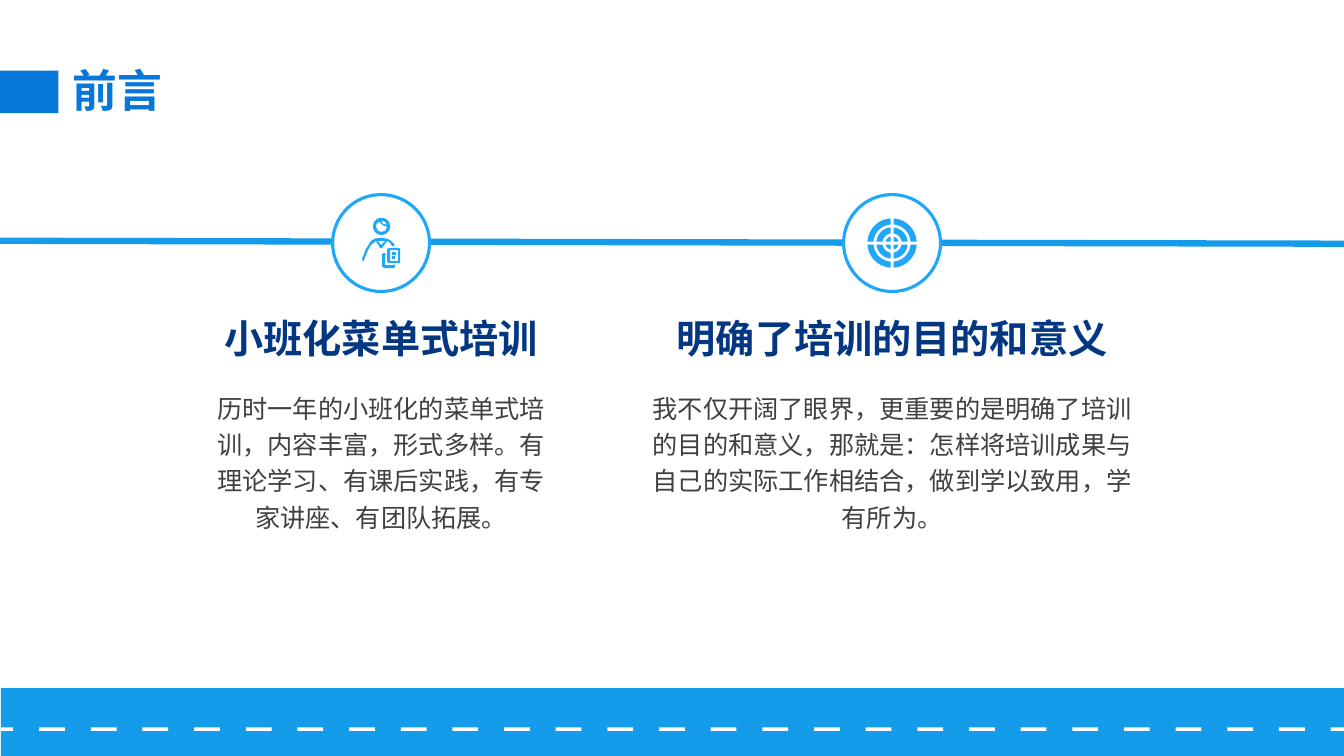
from math import acos, asin, cos, pi, sin, sqrt

from lxml.etree import SubElement
from pptx import Presentation
from pptx.dml.color import RGBColor
from pptx.enum.shapes import MSO_CONNECTOR as Connector, MSO_SHAPE as Preset
from pptx.enum.text import MSO_ANCHOR as Anchor, PP_ALIGN as Align
from pptx.oxml.ns import qn
from pptx.util import Pt

WHITE = RGBColor(0xFF, 0xFF, 0xFF)
TITLE_BLUE = RGBColor(0x07, 0x77, 0xD9)
ROAD_BLUE = RGBColor(0x14, 0x9C, 0xEA)
ICON_BLUE = RGBColor(0x20, 0xA7, 0xFA)
NAVY = RGBColor(0x03, 0x37, 0x82)
GRAY = RGBColor(0x40, 0x40, 0x40)
LATIN_FONT = "Arial"
CHINESE_FONT = "Noto Sans CJK SC"
WIDTH, HEIGHT = 960, 540


def arc(x, y, radius, start, end, steps=16):
    angles = [start + (end - start) * i / steps for i in range(steps + 1)]
    return [(x + radius * cos(a), y + radius * sin(a)) for a in angles]


def box(left, top, width, height):
    right, bottom = left + width, top + height
    return [(left, top), (right, top), (right, bottom), (left, bottom)]


def target_outlines(x, y):
    gap = 1.08
    outlines = []
    for outer, inner in ((17.6, 13.3), (11.2, 6.9), (4.7, gap * sqrt(2))):
        for quarter in range(4):
            turn = quarter * pi / 2
            far = arc(x, y, outer, turn + asin(gap / outer), turn + acos(gap / outer))
            near = arc(x, y, inner, turn + acos(gap / inner), turn + asin(gap / inner))
            outlines.append(far + near)
    return outlines


def trainer_outlines(x, y):
    head = arc(0.5, -16.5, 8.5, 0, 2 * pi, 32)
    face = [(-2, -21), (-4.5, -19), (-5, -16), (-3, -12), (0.5, -11), (4, -12),
            (6, -16), (2, -17.5)]
    hair = [(0, -22), (2, -19), (6, -18), (4, -21)]
    body = [(-18, 18), (-19, 16), (-15, 6), (-10, -2), (-6, -4.5), (-2, -5), (3, -5),
            (9, -3), (13, 1), (13.5, 3), (11, 3), (9, 0), (6, -2), (1, 5), (-1, 5),
            (-5, -2), (-10, 2), (-13, 7), (-17, 17)]
    collar = [(-3, -2), (0, 2), (4, -2)]
    back_card = [(13, 25), (3, 25), (1, 23), (1, 11), (3, 10), (5, 11), (4, 12.5),
                 (4, 22), (12, 22), (13, 21), (14, 23)]
    front_card = [(8, 5), (18, 5), (19, 6), (19, 19), (18, 20), (8, 20), (6, 19), (6, 6)]
    window = box(9, 7, 8, 11)
    marks = [box(11, 9, 4, 3), box(11, 13, 3, 3)]
    outlines = [head, face, hair, body, collar, back_card, front_card, window, *marks]
    return [[(x + 0.72 * dx, y + 0.72 * dy) for dx, dy in outline] for outline in outlines]


def dash_outlines(first, pitch, length, top, thickness):
    outlines = []
    for i in range(-1, 26):
        left = max(first + i * pitch, 0.6)
        right = min(first + i * pitch + length, WIDTH)
        outlines.append(box(left, top, right - left, thickness))
    return outlines


class SlideBuilder:
    def __init__(self, slide):
        self.slide = slide
        self.shapes = slide.shapes

    def paint(self, shape, fill, line=None, line_width=0):
        shape.shadow.inherit = False
        shape.fill.solid()
        shape.fill.fore_color.rgb = fill
        if line is None:
            shape.line.fill.background()
        else:
            shape.line.color.rgb = line
            shape.line.width = Pt(line_width)

    def preset(self, kind, left, top, width, height, fill, line=None, line_width=0):
        shape = self.shapes.add_shape(kind, Pt(left), Pt(top), Pt(width), Pt(height))
        self.paint(shape, fill, line, line_width)

    def outline(self, outlines, fill):
        points = [[(Pt(x), Pt(y)) for x, y in outline] for outline in outlines]
        builder = self.shapes.build_freeform(*points[0][0], scale=1.0)
        for i, contour in enumerate(points):
            if i:
                builder.move_to(*contour[0])
            builder.add_line_segments(contour[1:], close=True)
        self.paint(builder.convert_to_shape(), fill)

    def line(self, x1, y1, x2, y2, color, width):
        connector = self.shapes.add_connector(
            Connector.STRAIGHT, Pt(x1), Pt(y1), Pt(x2), Pt(y2))
        connector.line.color.rgb = color
        connector.line.width = Pt(width)
        SubElement(connector._element.spPr, qn("a:effectLst"))

    def text(self, words, left, top, width, height, size, color, bold=False,
             font=CHINESE_FONT, align=Align.CENTER, anchor=Anchor.MIDDLE,
             spacing=1.2, margins=(0, 0), wrap=True):
        shape = self.shapes.add_textbox(Pt(left), Pt(top), Pt(width), Pt(height))
        frame = shape.text_frame
        frame.word_wrap = wrap
        frame.vertical_anchor = anchor
        frame.margin_left, frame.margin_right = Pt(margins[0]), Pt(margins[1])
        paragraph = frame.paragraphs[0]
        paragraph.text = words
        paragraph.alignment = align
        paragraph.line_spacing = spacing
        paragraph.font.size = Pt(size)
        paragraph.font.bold = bold
        paragraph.font.color.rgb = color
        paragraph.font.name = font
        properties = paragraph._p.pPr.find(qn("a:defRPr"))
        SubElement(properties, qn("a:ea"), typeface=CHINESE_FONT)

    def topic(self, center, width, heading, body, icon_outlines):
        left = center - width / 2
        self.preset(Preset.OVAL, center - 34.6, 139, 69.2, 69.2, WHITE, ICON_BLUE, 2.25)
        self.outline(icon_outlines(center, 173.6), ICON_BLUE)
        self.text(body, left, 272.9, width, 110, 18, GRAY, anchor=Anchor.TOP)
        self.text(heading, center - 173, 216.7, 346, 42.5, 28, NAVY, bold=True,
                  margins=(7.2, 7.2))


def main():
    presentation = Presentation()
    presentation.slide_width, presentation.slide_height = Pt(WIDTH), Pt(HEIGHT)
    slide = presentation.slides.add_slide(presentation.slide_layouts[6])
    builder = SlideBuilder(slide)

    builder.preset(Preset.RECTANGLE, 0, 50.4, 41.8, 30.4, TITLE_BLUE)
    builder.text("前言", 51.8, 51.1, 175, 31, 32, TITLE_BLUE, bold=True, font=LATIN_FONT,
                 align=Align.LEFT, spacing=0.9, margins=(0, 7.2), wrap=False)

    builder.preset(Preset.RECTANGLE, 0.6, 491.5, 959.4, 48.5, ROAD_BLUE)
    builder.outline(dash_outlines(28, 36.9, 18.4, 519.6, 2.5), WHITE)

    builder.line(WIDTH, 174.1, 0, 172, ROAD_BLUE, 4.5)
    builder.topic(272.2, 236.2, "小班化菜单式培训",
                  "历时一年的小班化的菜单式培训，内容丰富，形式多样。"
                  "有理论学习、有课后实践，有专家讲座、有团队拓展。", trainer_outlines)
    builder.topic(637.2, 345.6, "明确了培训的目的和意义",
                  "我不仅开阔了眼界，更重要的是明确了培训的目的和意义，那就是："
                  "怎样将培训成果与自己的实际工作相结合，做到学以致用，学有所为。",
                  target_outlines)
    presentation.save("out.pptx")


if __name__ == "__main__":
    main()
